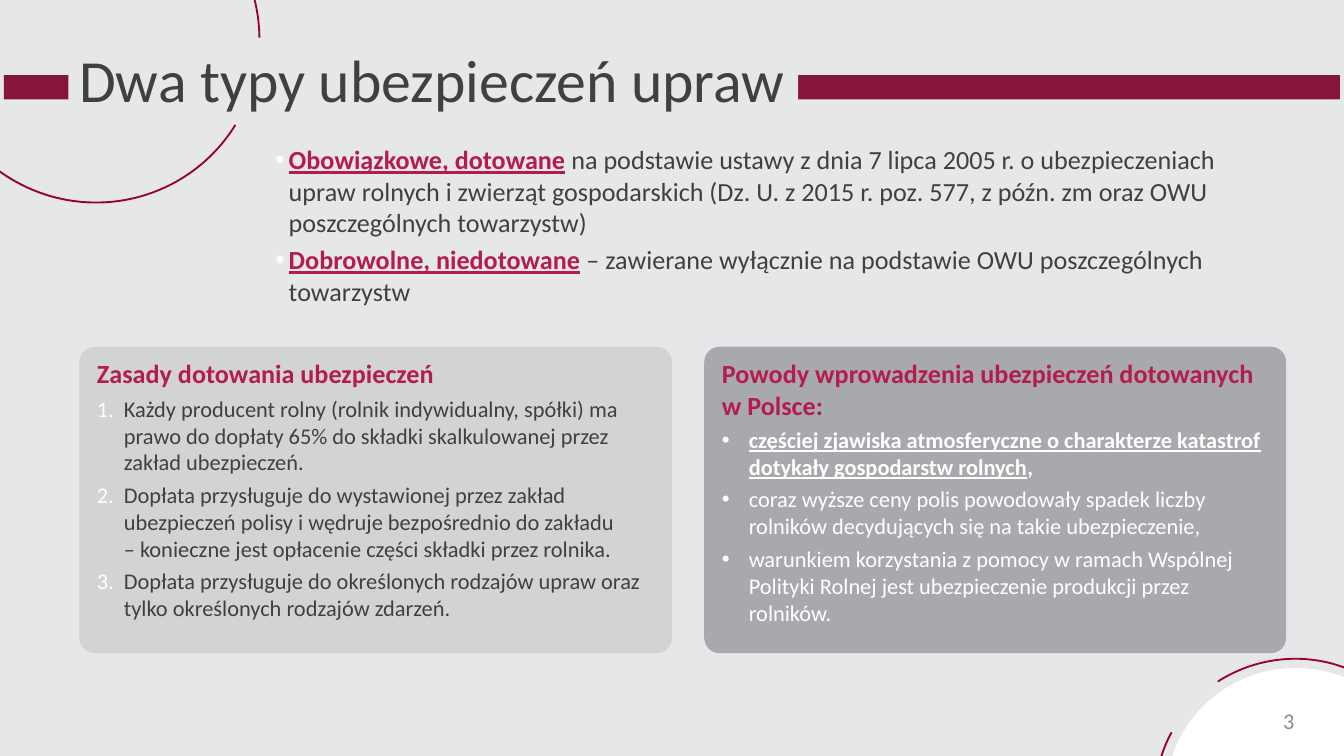
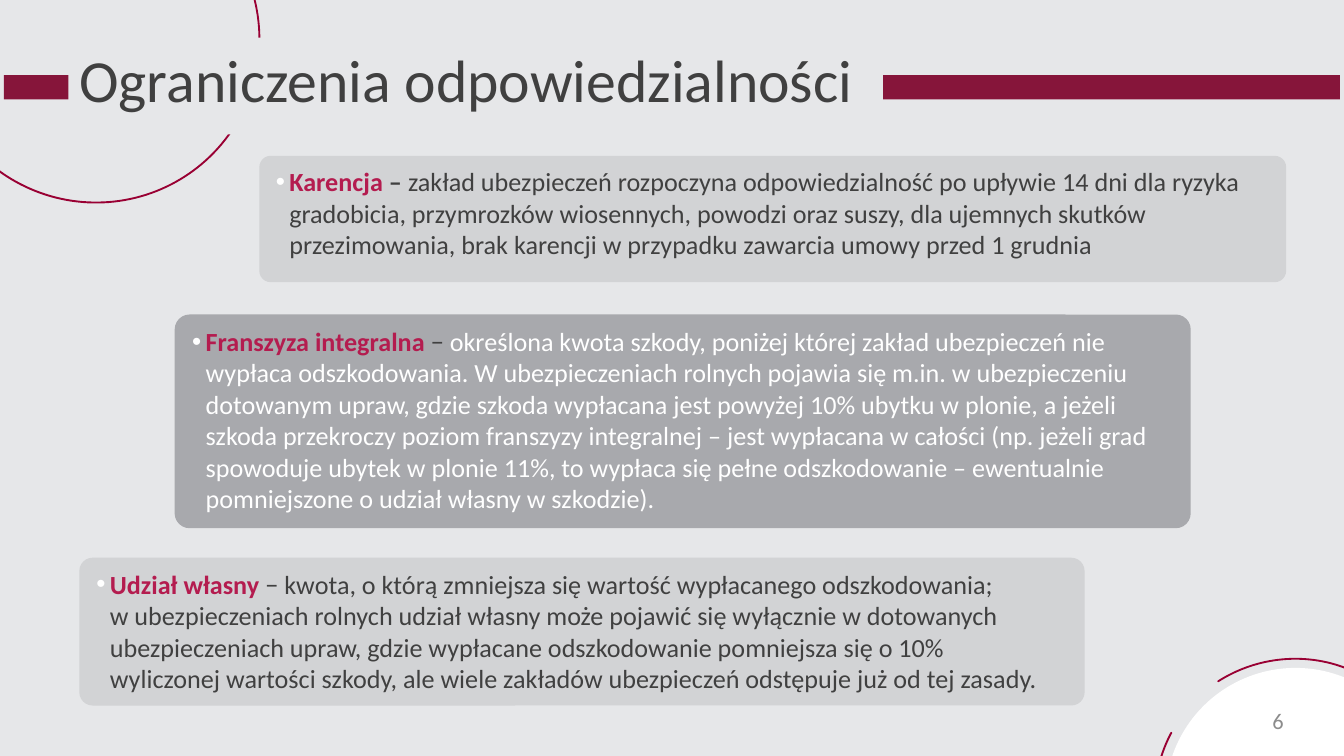
"""Build two slides on crop insurance: its types and its limits."""
from dataclasses import dataclass
from typing import NamedTuple, Optional

from lxml import etree
from pptx import Presentation
from pptx import util as u
from pptx.dml.color import RGBColor
from pptx.enum import shapes, text
from pptx.oxml import ns


@dataclass(frozen=True)
class Theme:
    font: str = "Calibri"
    back: str = "E6E7E9"
    band: str = "86153A"
    arc: str = "990033"
    key: str = "B41C4F"
    dark: str = "404040"
    white: str = "FFFFFF"
    pale: str = "D2D3D5"
    gray: str = "A8A9AD"
    page: str = "8C8C8C"
    head: int = 32
    lead: int = 14
    small: int = 12


T = Theme()
KIND = shapes.MSO_SHAPE


class Box(NamedTuple):
    left: float
    top: float
    width: float
    height: float


class Run(NamedTuple):
    words: str
    color: str = T.dark
    size: int = T.lead
    bold: bool = False
    under: bool = False


class Para(NamedTuple):
    runs: list[Run]
    mark: str = ""
    indent: float = 0


class Card(NamedTuple):
    box: Box
    paras: list[Para]
    fill: Optional[str] = None
    round: float = 0.05


class Arc(NamedTuple):
    box: Box
    turn: float
    start: float


class Page(NamedTuple):
    title: str
    mask: Box
    number: str
    edge: float
    cards: list[Card]


ARCS = [
    Arc(Box(-0.51, -0.93, 2.44, 2.45), 12.3, 170.45),
    Arc(Box(-0.51, -0.94, 2.44, 2.45), 132.3, 155.79),
    Arc(Box(8.59, 4.92, 2.11, 2.06), 205.2, 170.45),
    Arc(Box(8.56, 4.91, 2.11, 2.06), 325.2, 163.48),
]
BAND = Box(0.03, 0.56, 9.94, 0.18)
DISC = Box(8.67, 4.97, 1.94, 1.94)


def key(words: str, under: bool = False) -> Run:
    return Run(words, T.key, bold=True, under=under)


def point(*runs: Run) -> Para:
    return Para(list(runs), "•", 0.1)


def item(mark: str, *runs: Run) -> Para:
    return Para(list(runs), mark, 0.2)


def step(words: str) -> Para:
    return item("1.", Run(words, size=T.small))


def cause(words: str) -> Para:
    return item("•", Run(words, T.white, T.small))


def place(box: Box) -> list[u.Length]:
    return [u.Inches(side) for side in box]


def draw(slide, kind, box: Box, fill: Optional[str], line: Optional[str] = None):
    shape = slide.shapes.add_shape(kind, *place(box))
    shape.shadow.inherit = False
    if fill:
        shape.fill.solid()
        shape.fill.fore_color.rgb = RGBColor.from_string(fill)
    else:
        shape.fill.background()
    if line:
        shape.line.color.rgb = RGBColor.from_string(line)
        shape.line.width = u.Pt(1)
    else:
        shape.line.fill.background()
    return shape


def add_run(para, run: Run) -> None:
    for spot, part in enumerate(run.words.split("\n")):
        if spot:
            para.add_line_break()
        piece = para.add_run()
        piece.text = part
        font = piece.font
        font.name, font.size = T.font, u.Pt(run.size)
        font.bold, font.underline = run.bold, run.under
        font.color.rgb = RGBColor.from_string(run.color)


def add_mark(para, mark: str, indent: float) -> None:
    props = para._p.get_or_add_pPr()
    props.set("marL", str(u.Inches(indent)))
    props.set("indent", str(-u.Inches(indent)))
    tint = etree.SubElement(props, ns.qn("a:buClr"))
    etree.SubElement(tint, ns.qn("a:srgbClr"), val=T.white)
    if mark == "•":
        etree.SubElement(props, ns.qn("a:buFont"), typeface="Arial")
        etree.SubElement(props, ns.qn("a:buChar"), char=mark)
    else:
        etree.SubElement(props, ns.qn("a:buAutoNum"), type="arabicPeriod")


def write(shape, paras: list[Para], gap: float = 0,
          align=text.PP_ALIGN.LEFT, anchor=text.MSO_ANCHOR.TOP):
    frame = shape.text_frame
    frame.word_wrap = True
    frame.vertical_anchor = anchor
    for spot, plan in enumerate(paras):
        para = frame.add_paragraph() if spot else frame.paragraphs[0]
        para.alignment = align
        para.space_before = u.Pt(gap)
        if plan.mark:
            add_mark(para, plan.mark, plan.indent)
        for run in plan.runs:
            add_run(para, run)
    return frame


def add_base(slide) -> None:
    slide.background.fill.solid()
    slide.background.fill.fore_color.rgb = RGBColor.from_string(T.back)
    for arc in ARCS:
        shape = draw(slide, KIND.BLOCK_ARC, arc.box, T.band, T.arc)
        shape.rotation = arc.turn
        for spot, value in enumerate((arc.start, 1.76, 0)):
            shape.adjustments[spot] = value
    draw(slide, KIND.RECTANGLE, BAND, T.band)
    draw(slide, KIND.OVAL, DISC, T.white)


def add_title(slide, page: Page) -> None:
    shape = draw(slide, KIND.RECTANGLE, page.mask, T.back)
    frame = write(shape, [Para([Run(page.title, size=T.head)])])
    frame.margin_left = frame.margin_right = u.Inches(0.08)
    frame.margin_top, frame.margin_bottom = u.Inches(0.04), u.Inches(0.12)
    frame.auto_size = text.MSO_AUTO_SIZE.SHAPE_TO_FIT_TEXT


def add_card(slide, card: Card) -> None:
    shape = draw(slide, KIND.ROUNDED_RECTANGLE, card.box, card.fill)
    shape.adjustments[0] = card.round
    write(shape, card.paras, gap=3)


def add_page(deck, page: Page) -> None:
    slide = deck.slides.add_slide(deck.slide_layouts[6])
    add_base(slide)
    foot = slide.shapes.add_textbox(*place(Box(page.edge, 5.21, 1.38, 0.3)))
    write(foot, [Para([Run(page.number, T.page, T.small)])],
          align=text.PP_ALIGN.RIGHT, anchor=text.MSO_ANCHOR.MIDDLE)
    add_title(slide, page)
    for card in page.cards:
        add_card(slide, card)


TYPES = Page("Dwa typy ubezpieczeń upraw", Box(0.51, 0.28, 5.43, 0.55), "3", 8.35, [
    Card(Box(5.24, 2.58, 4.33, 2.28), [
        Para([key("Powody wprowadzenia ubezpieczeń dotowanych w Polsce:")]),
        item("•",
             Run("częściej zjawiska atmosferyczne o charakterze katastrof "
                 "dotykały gospodarstw rolnych", T.white, T.small, True, True),
             Run(",", T.white, T.small, True)),
        cause("coraz wyższe ceny polis powodowały spadek liczby rolników "
              "decydujących się na takie ubezpieczenie,"),
        cause("warunkiem korzystania z pomocy w ramach Wspólnej Polityki Rolnej "
              "jest ubezpieczenie produkcji przez rolników."),
    ], T.gray),
    Card(Box(0.59, 2.58, 4.41, 2.28), [
        Para([key("Zasady dotowania ubezpieczeń")]),
        step("Każdy producent rolny (rolnik indywidualny, spółki) ma prawo do "
             "dopłaty 65% do składki skalkulowanej przez zakład ubezpieczeń."),
        step("Dopłata przysługuje do wystawionej przez zakład ubezpieczeń polisy "
             "i wędruje bezpośrednio do zakładu \n– konieczne jest opłacenie "
             "części składki przez rolnika."),
        step("Dopłata przysługuje do określonych rodzajów upraw oraz tylko "
             "określonych rodzajów zdarzeń."),
    ], T.pale),
    Card(Box(1.93, 1, 7.64, 1.42), [
        point(key("Obowiązkowe, dotowane", True), key(" "),
              Run("na podstawie ustawy z dnia 7 lipca 2005 r. o ubezpieczeniach "
                  "upraw rolnych i zwierząt gospodarskich (Dz. U. z 2015 r. poz. 577, "
                  "z późn. zm oraz OWU poszczególnych towarzystw)")),
        point(key("Dobrowolne, niedotowane", True), key(" "),
              Run("– zawierane wyłącznie na podstawie OWU poszczególnych towarzystw")),
    ]),
])

LIMITS = Page("Ograniczenia odpowiedzialności", Box(0.51, 0.28, 6.06, 0.72), "6", 8.27, [
    Card(Box(1.3, 2.34, 7.56, 1.59), [
        point(key("Franszyza integralna "), Run("− "),
              Run("określona kwota szkody, poniżej której zakład ubezpieczeń nie "
                  "wypłaca odszkodowania. W ubezpieczeniach rolnych pojawia się m.in. "
                  "w ubezpieczeniu dotowanym upraw, gdzie szkoda wypłacana jest powyżej "
                  "10% ubytku w plonie, a jeżeli szkoda przekroczy poziom franszyzy "
                  "integralnej – jest wypłacana w całości (np. jeżeli grad spowoduje "
                  "ubytek w plonie 11%, to wypłaca się pełne odszkodowanie – ewentualnie "
                  "pomniejszone o udział własny w szkodzie).", T.white)),
    ], T.gray, 0.07),
    Card(Box(0.59, 4.15, 7.48, 1.1), [
        point(key("Udział własny "),
              Run("− kwota, o którą zmniejsza się wartość wypłacanego odszkodowania; "
                  "\nw ubezpieczeniach rolnych udział własny może pojawić się wyłącznie "
                  "w dotowanych ubezpieczeniach upraw, gdzie wypłacane odszkodowanie "
                  "pomniejsza się o 10% \nwyliczonej wartości szkody, ale wiele zakładów "
                  "ubezpieczeń odstępuje już od tej zasady.")),
    ], T.pale, 0.09),
    Card(Box(1.93, 1.16, 7.64, 0.94), [
        point(key("Karencja"), Run(" – ", bold=True),
              Run("zakład ubezpieczeń rozpoczyna odpowiedzialność po upływie 14 dni "
                  "dla ryzyka gradobicia, przymrozków wiosennych, powodzi oraz suszy, "
                  "dla ujemnych skutków przezimowania, brak karencji w przypadku "
                  "zawarcia umowy przed 1 grudnia")),
    ], T.pale, 0.09),
])


def main() -> None:
    deck = Presentation()
    deck.slide_width, deck.slide_height = u.Inches(10), u.Inches(10 * 9 / 16)
    for page in (TYPES, LIMITS):
        add_page(deck, page)
    deck.save("out.pptx")


if __name__ == "__main__":
    main()
